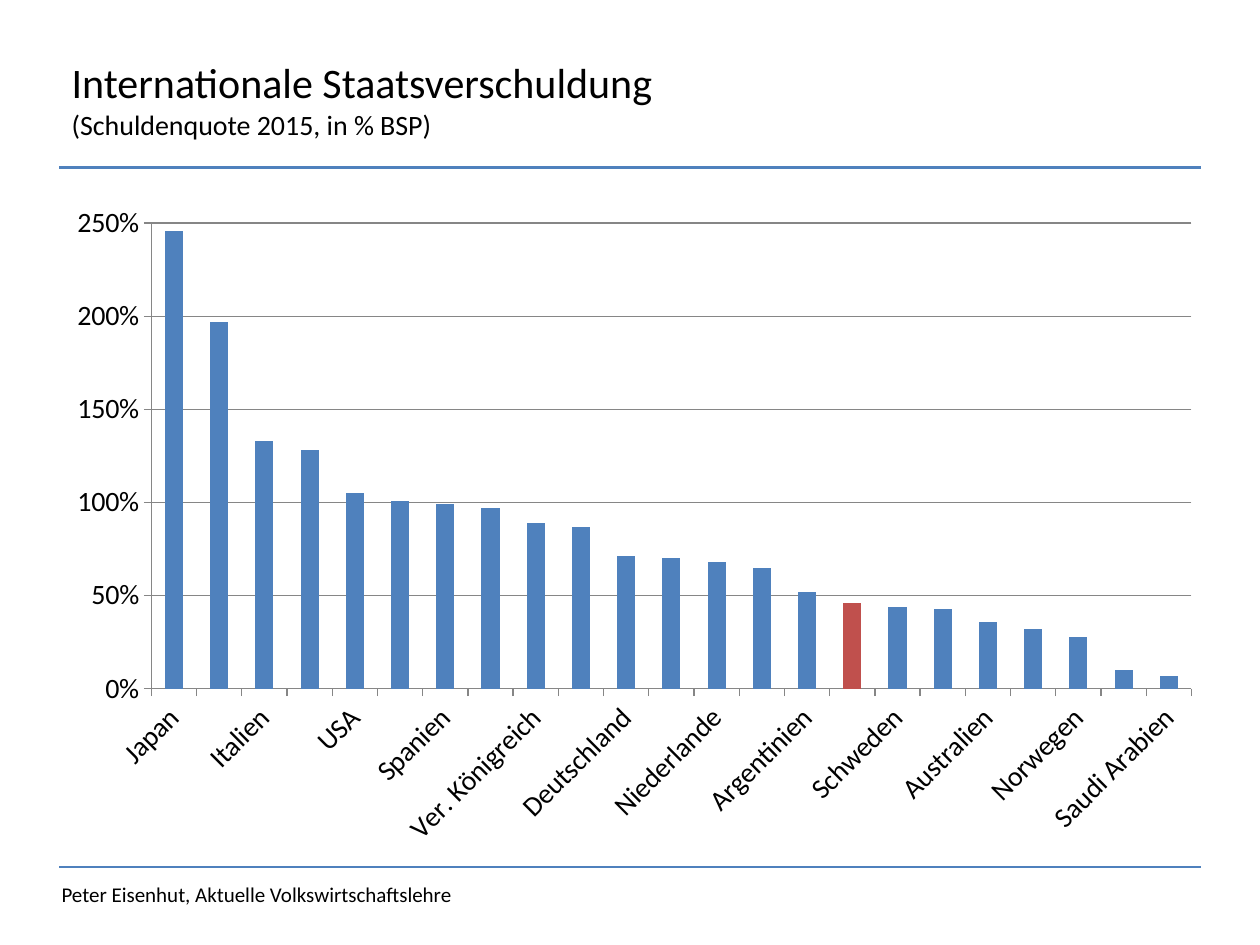
from lxml import etree
from pptx import Presentation
from pptx import util as u
from pptx.chart import data as chart_data
from pptx.dml.color import RGBColor
from pptx.enum import chart as charts, shapes, text
from pptx.oxml import ns

BLACK = RGBColor(0x00, 0x00, 0x00)
BLUE = RGBColor(0x4F, 0x81, 0xBD)
RED = RGBColor(0xC0, 0x50, 0x4D)
GRAY = RGBColor(0x86, 0x86, 0x86)

HIGHLIGHT = "Schweiz"
DEBT_RATIOS = {
    "Japan": 2.46, "Griechland": 1.97, "Italien": 1.33, "Portugal": 1.28,
    "USA": 1.05, "Irland": 1.01, "Spanien": 0.99, "Frankreich": 0.97,
    "Ver. Königreich": 0.89, "Österreich": 0.87, "Deutschland": 0.71,
    "Brasilien": 0.7, "Niederlande": 0.68, "Indien": 0.65,
    "Argentinien": 0.52, "Schweiz": 0.46, "Schweden": 0.44, "China": 0.43,
    "Australien": 0.36, "Türkei": 0.32, "Norwegen": 0.28, "Kuwait": 0.1,
    "Saudi Arabien": 0.07,
}


def apply(target, values):
    for name, value in values.items():
        setattr(target, name, value)


class SlideBuilder:
    font_name = "Calibri"

    def __init__(self, slide):
        self.slide = slide

    def style_font(self, font, size):
        apply(font, {"name": self.font_name, "size": u.Pt(size)})
        font.color.rgb = BLACK

    def rule(self, left, right, top):
        line = self.slide.shapes.add_connector(
            shapes.MSO_CONNECTOR.STRAIGHT,
            u.Inches(left), u.Inches(top), u.Inches(right), u.Inches(top))
        line.line.color.rgb = BLUE
        line.line.width = u.Pt(1.25)
        etree.SubElement(line._element.spPr, ns.qn("a:effectLst"))

    def text_box(self, left, top, width, height, lines, anchor):
        box = self.slide.shapes.add_textbox(*map(u.Inches, (left, top, width, height)))
        apply(box.text_frame, {"word_wrap": True, "vertical_anchor": anchor})
        para = box.text_frame.paragraphs[0]
        for index, (content, size) in enumerate(lines):
            if index:
                para.add_line_break()
            span = para.add_run()
            span.text = content
            self.style_font(span.font, size)

    def column_chart(self, left, top, width, height, values, highlight):
        table = chart_data.CategoryChartData(number_format="0%")
        table.categories = list(values)
        table.add_series("Series 1", list(values.values()))
        chart = self.slide.shapes.add_chart(
            charts.XL_CHART_TYPE.COLUMN_CLUSTERED,
            *map(u.Inches, (left, top, width, height)), table).chart
        apply(chart, {"has_legend": False, "has_title": False})
        self.style_font(chart.font, 18)

        plot = chart.plots[0]
        apply(plot, {"gap_width": 150, "vary_by_categories": False})
        series = plot.series[0]
        highlighted = series.points[list(values).index(highlight)]
        for target, color in ((series, BLUE), (highlighted, RED)):
            target.format.fill.solid()
            target.format.fill.fore_color.rgb = color

        for axis in (chart.category_axis, chart.value_axis):
            apply(axis, {"major_tick_mark": charts.XL_TICK_MARK.OUTSIDE,
                         "minor_tick_mark": charts.XL_TICK_MARK.NONE})
            axis.format.line.color.rgb = GRAY
            self.style_font(axis.tick_labels.font, 16)
        labels = chart.category_axis._element.find(ns.qn("c:txPr"))
        labels.find(ns.qn("a:bodyPr")).set("rot", "-2700000")

        apply(chart.value_axis, {"minimum_scale": 0, "maximum_scale": 2.5,
                                 "major_unit": 0.5, "has_major_gridlines": True})
        chart.value_axis.major_gridlines.format.line.color.rgb = GRAY
        apply(chart.value_axis.tick_labels,
              {"number_format": "0%", "number_format_is_linked": False})


def main():
    deck = Presentation()
    apply(deck, {"slide_width": u.Inches(10), "slide_height": u.Inches(7.5)})
    page = SlideBuilder(deck.slides.add_slide(deck.slide_layouts[6]))
    for top in (1.33, 6.88):
        page.rule(0.47, 9.53, top)
    page.text_box(0.39, 6.95, 6.02, 0.3,
                  [("Peter Eisenhut, Aktuelle Volkswirtschaftslehre", 12)],
                  text.MSO_ANCHOR.TOP)
    page.text_box(0.47, 0.16, 7.89, 1.25,
                  [("Internationale Staatsverschuldung", 24),
                   ("(Schuldenquote 2015, in % BSP)", 16)],
                  text.MSO_ANCHOR.MIDDLE)
    page.column_chart(0.43, 1.53, 9.21, 5.29, DEBT_RATIOS, HIGHLIGHT)
    deck.save("out.pptx")


if __name__ == "__main__":
    main()
